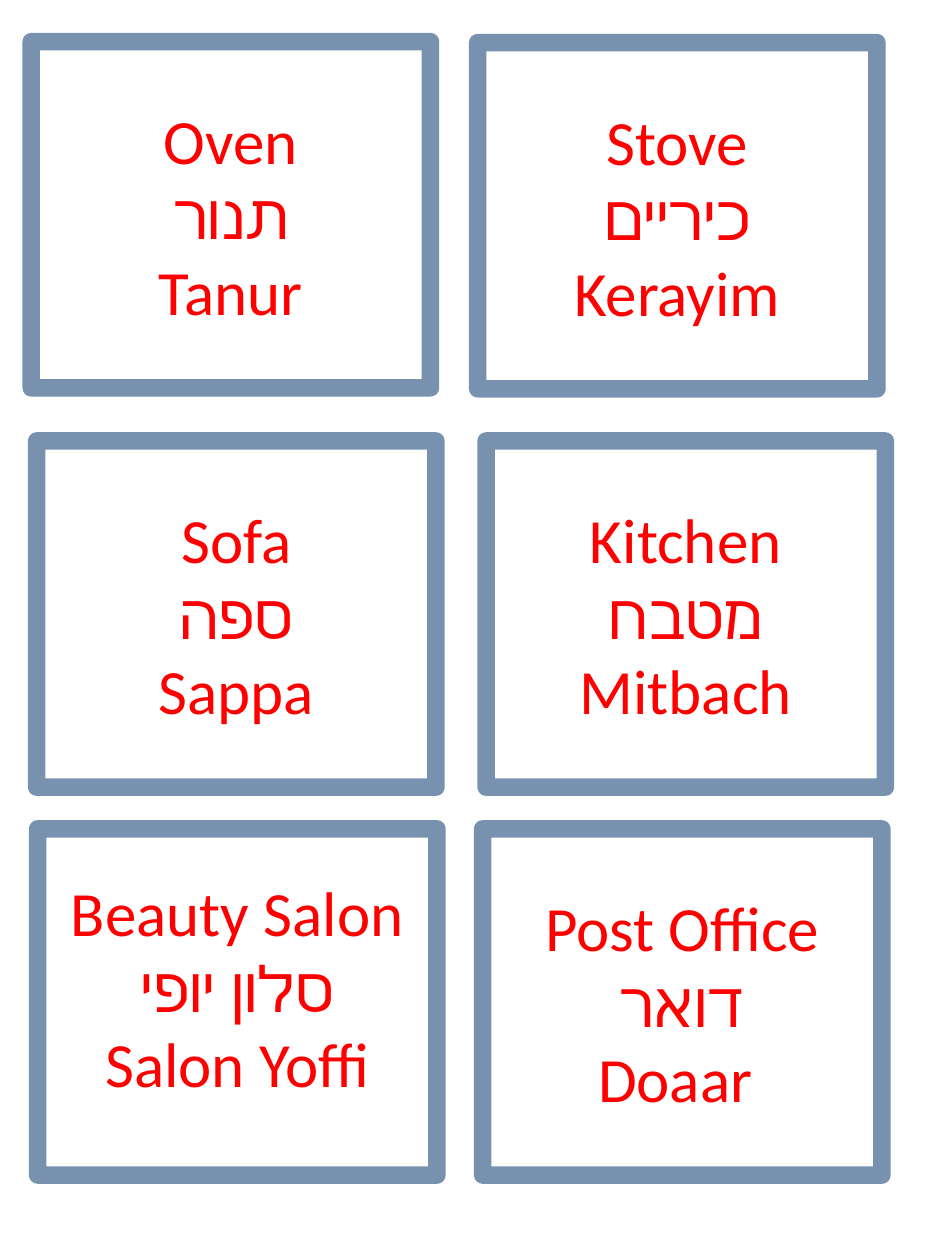
"""Build a sheet of six English and Hebrew word cards."""
from dataclasses import dataclass

import pptx
import pptx.dml.color
import pptx.enum.shapes
import pptx.enum.text
import pptx.oxml
import pptx.oxml.ns
import pptx.slide
import pptx.text.text
import pptx.util
from pptx.util import Cm


@dataclass(frozen=True)
class Theme:
    font: str = "Calibri"
    size: int = 36
    ink: str = "FF0000"
    paper: str = "FFFFFF"
    edge: str = "395E89"
    weight: int = 10
    alpha: int = 68


@dataclass(frozen=True)
class Card:
    left: float
    top: float
    lines: tuple[str, ...]
    lift: float = 0


THEME = Theme()
WIDTH, HEIGHT = Cm(8.05), Cm(6.98)
INSET = 0.13
CARDS = (
    Card(0.63, 0.84, ("Oven", "תנור", "Tanur")),
    Card(9.63, 0.86, ("Stove", "כיריים", "Kerayim")),
    Card(0.74, 8.89, ("Sofa", "ספה", "Sappa")),
    Card(9.8, 8.89, ("Kitchen", "מטבח", "Mitbach")),
    Card(0.76, 16.71, ("Beauty Salon", "סלון יופי", "Salon Yoffi"), lift=0.61),
    Card(9.73, 16.71, ("Post Office", "דואר", "Doaar ")),
)


def color(code: str) -> pptx.dml.color.RGBColor:
    return pptx.dml.color.RGBColor.from_string(code)


def write(par: pptx.text.text._Paragraph, text: str, *, font: str, size: int, ink: str) -> None:
    par.alignment = pptx.enum.text.PP_ALIGN.CENTER
    run = par.add_run()
    run.text = text
    run.font.name = font
    run.font.size = pptx.util.Pt(size)
    run.font.color.rgb = color(ink)


def draw(slide: pptx.slide.Slide, card: Card) -> None:
    box = slide.shapes.add_shape(
        pptx.enum.shapes.MSO_SHAPE.RECTANGLE, Cm(card.left), Cm(card.top), WIDTH, HEIGHT
    )
    box.shadow.inherit = False
    box.fill.solid()
    box.fill.fore_color.rgb = color(THEME.paper)
    box.line.color.rgb = color(THEME.edge)
    box.line.width = pptx.util.Pt(THEME.weight)
    name = pptx.oxml.ns.qn
    edge = box.line._get_or_add_ln()
    tint = edge.find(".//" + name("a:srgbClr"))
    tint.append(tint.makeelement(name("a:alpha"), {"val": str(THEME.alpha * 1000)}))
    edge.append(edge.makeelement(name("a:round"), {}))

    frame = box.text_frame
    frame.word_wrap = True
    frame.vertical_anchor = pptx.enum.text.MSO_ANCHOR.MIDDLE
    frame.margin_top = Cm(INSET)
    frame.margin_bottom = Cm(INSET + card.lift)
    for index, line in enumerate(card.lines):
        par = frame.add_paragraph() if index else frame.paragraphs[0]
        write(par, line, font=THEME.font, size=THEME.size, ink=THEME.ink)


def main() -> None:
    deck = pptx.Presentation()
    deck.slide_width, deck.slide_height = Cm(19.05), Cm(25.4)
    slide = deck.slides.add_slide(deck.slide_layouts[6])
    for card in CARDS:
        draw(slide, card)
    deck.save("out.pptx")


if __name__ == "__main__":
    main()
